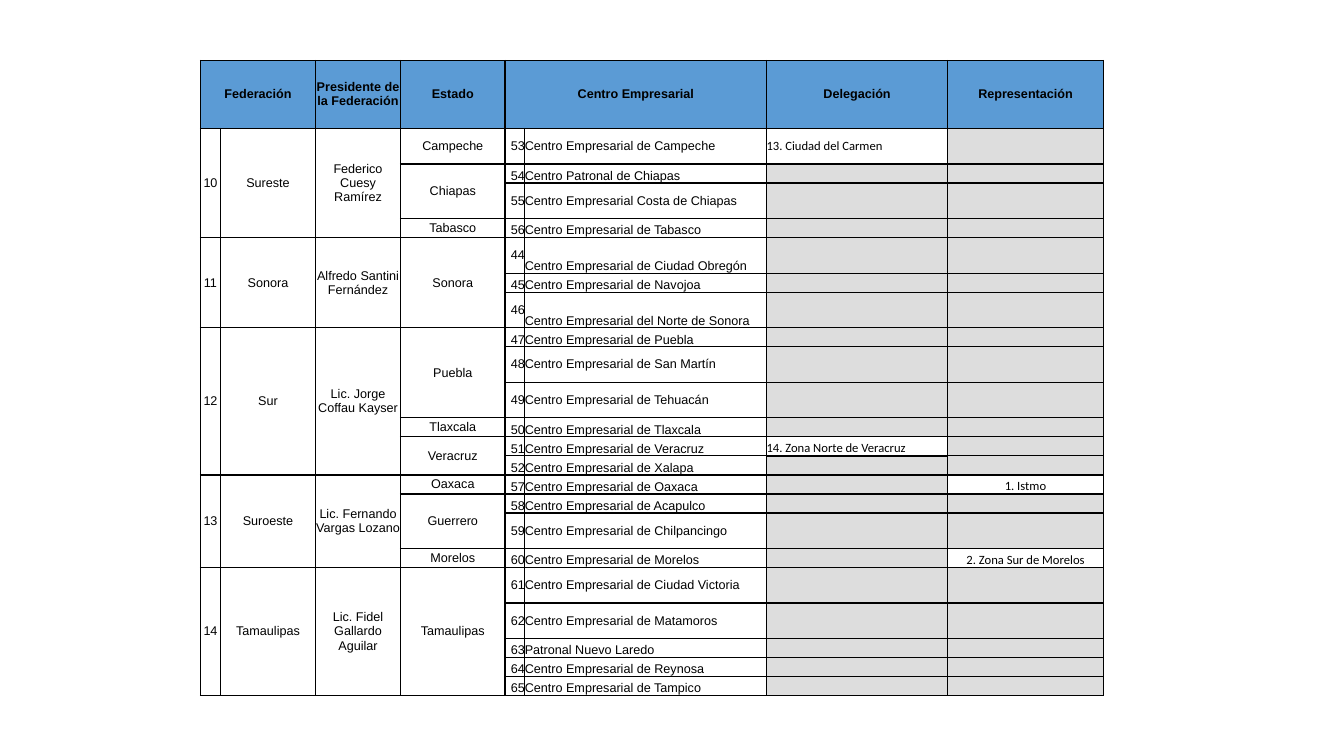
from lxml import etree
from pptx import Presentation
from pptx.dml.color import RGBColor
from pptx.enum import text
from pptx.oxml import ns
from pptx.util import Pt

BLACK = RGBColor(0x00, 0x00, 0x00)
WHITE = RGBColor(0xFF, 0xFF, 0xFF)
BLUE = RGBColor(0x5B, 0x9B, 0xD5)
GREY = RGBColor(0xDD, 0xDD, 0xDD)
LEFT, CENTER, RIGHT = text.PP_ALIGN.LEFT, text.PP_ALIGN.CENTER, text.PP_ALIGN.RIGHT
MIDDLE, BOTTOM = text.MSO_ANCHOR.MIDDLE, text.MSO_ANCHOR.BOTTOM

COLUMN_WIDTHS = [14.3, 67.9, 60.7, 74.7, 14.1, 172.7, 129.3, 111.4]
HEADER_HEIGHT, TALL, SHORT = 48.6, 25.4, 13.6
HEADERS = {0: "Federación", 2: "Presidente de la Federación", 3: "Estado",
           4: "Centro Empresarial", 6: "Delegación", 7: "Representación"}

FEDERATIONS = [
    (10, "Sureste", "Federico Cuesy Ramírez", [
        ("Campeche", [(53, "Centro Empresarial de Campeche")]),
        ("Chiapas", [(54, "Centro Patronal de Chiapas"),
                     (55, "Centro Empresarial Costa de Chiapas")]),
        ("Tabasco", [(56, "Centro Empresarial de Tabasco")])]),
    (11, "Sonora", "Alfredo Santini Fernández", [
        ("Sonora", [(44, "Centro Empresarial de Ciudad Obregón"),
                    (45, "Centro Empresarial de Navojoa"),
                    (46, "Centro Empresarial del Norte de Sonora")])]),
    (12, "Sur", "Lic. Jorge Coffau Kayser", [
        ("Puebla", [(47, "Centro Empresarial de Puebla"),
                    (48, "Centro Empresarial de San Martín"),
                    (49, "Centro Empresarial de Tehuacán")]),
        ("Tlaxcala", [(50, "Centro Empresarial de Tlaxcala")]),
        ("Veracruz", [(51, "Centro Empresarial de Veracruz"),
                      (52, "Centro Empresarial de Xalapa")])]),
    (13, "Suroeste", "Lic. Fernando Vargas Lozano", [
        ("Oaxaca", [(57, "Centro Empresarial de Oaxaca")]),
        ("Guerrero", [(58, "Centro Empresarial de Acapulco"),
                      (59, "Centro Empresarial de Chilpancingo")]),
        ("Morelos", [(60, "Centro Empresarial de Morelos")])]),
    (14, "Tamaulipas", "Lic. Fidel Gallardo Aguilar", [
        ("Tamaulipas", [(61, "Centro Empresarial de Ciudad Victoria"),
                        (62, "Centro Empresarial de Matamoros"),
                        (63, "Patronal Nuevo Laredo"),
                        (64, "Centro Empresarial de Reynosa"),
                        (65, "Centro Empresarial de Tampico")])]),
]
TALL_CENTERS = {53, 55, 44, 46, 48, 49, 59, 61, 62}
LOW_NAMES = {44, 46}
BRANCHES = {(53, 6): "13. Ciudad del Carmen", (51, 6): "14. Zona Norte de Veracruz",
            (57, 7): "1. Istmo", (60, 7): "2. Zona Sur de Morelos"}


def write(cell, words, font="Arial", bold=False, align=CENTER, anchor=MIDDLE):
    cell.vertical_anchor = anchor
    para = cell.text_frame.paragraphs[0]
    para.alignment = align
    span = para.add_run()
    span.text = str(words)
    span.font.name = font
    span.font.size = Pt(9)
    span.font.bold = bold
    span.font.color.rgb = BLACK


def add_borders(cell, thick):
    properties = cell._tc.get_or_add_tcPr()
    for side in "LRTB":
        width = Pt(1.3 if side in thick else 1)
        line = etree.SubElement(properties, ns.qn("a:ln" + side), w=str(width))
        fill = etree.SubElement(line, ns.qn("a:solidFill"))
        etree.SubElement(fill, ns.qn("a:srgbClr"), val=str(BLACK))


centers = [center for federation in FEDERATIONS
           for state in federation[3] for center in state[1]]
heights = [HEADER_HEIGHT] + [TALL if number in TALL_CENTERS else SHORT
                             for number, name in centers]
row_of = {number: row for row, (number, name) in enumerate(centers, 1)}
branch_cells = {(row_of[number], column) for number, column in BRANCHES}

deck = Presentation()
deck.slide_width, deck.slide_height = Pt(960), Pt(540)
page = deck.slides.add_slide(deck.slide_layouts[6])
frame = page.shapes.add_table(len(heights), len(COLUMN_WIDTHS), Pt(143.2), Pt(43.2),
                              Pt(sum(COLUMN_WIDTHS)), Pt(sum(heights)))
table = frame.table
table.first_row = False
table.horz_banding = False
for column, width in zip(table.columns, COLUMN_WIDTHS):
    column.width = Pt(width)
for row, height in zip(table.rows, heights):
    row.height = Pt(height)

for row in range(len(heights)):
    for column in range(len(COLUMN_WIDTHS)):
        cell = table.cell(row, column)
        cell.margin_left = cell.margin_right = cell.margin_top = cell.margin_bottom = 0
        thick = "RB" if (row, column) in branch_cells else ""
        thick += "L" if (row, column - 1) in branch_cells else ""
        thick += "T" if (row - 1, column) in branch_cells else ""
        add_borders(cell, thick)
        if (row, column) in branch_cells:
            cell.fill.background()
        else:
            cell.fill.solid()
            cell.fill.fore_color.rgb = BLUE if row == 0 else GREY if column > 5 else WHITE
        etree.SubElement(cell.text_frame.paragraphs[0]._p, ns.qn("a:endParaRPr"), sz="900")

for column, header in HEADERS.items():
    if column in (0, 4):
        table.cell(0, column).merge(table.cell(0, column + 1))
    write(table.cell(0, column), header, bold=True)

row = 1
for number, federation, president, states in FEDERATIONS:
    size = sum(len(members) for state, members in states)
    for column, words in enumerate((number, federation, president)):
        table.cell(row, column).merge(table.cell(row + size - 1, column))
        write(table.cell(row, column), words)
    for state, members in states:
        if len(members) > 1:
            table.cell(row, 3).merge(table.cell(row + len(members) - 1, 3))
        write(table.cell(row, 3), state)
        for center, name in members:
            anchor = MIDDLE if center in TALL_CENTERS else BOTTOM
            write(table.cell(row, 4), center, align=RIGHT, anchor=anchor)
            write(table.cell(row, 5), name, align=LEFT,
                  anchor=BOTTOM if center in LOW_NAMES else anchor)
            for column, align in ((6, LEFT), (7, CENTER)):
                if (center, column) in BRANCHES:
                    write(table.cell(row, column), BRANCHES[center, column],
                          font="Calibri", align=align, anchor=anchor)
            row += 1

deck.save("out.pptx")
